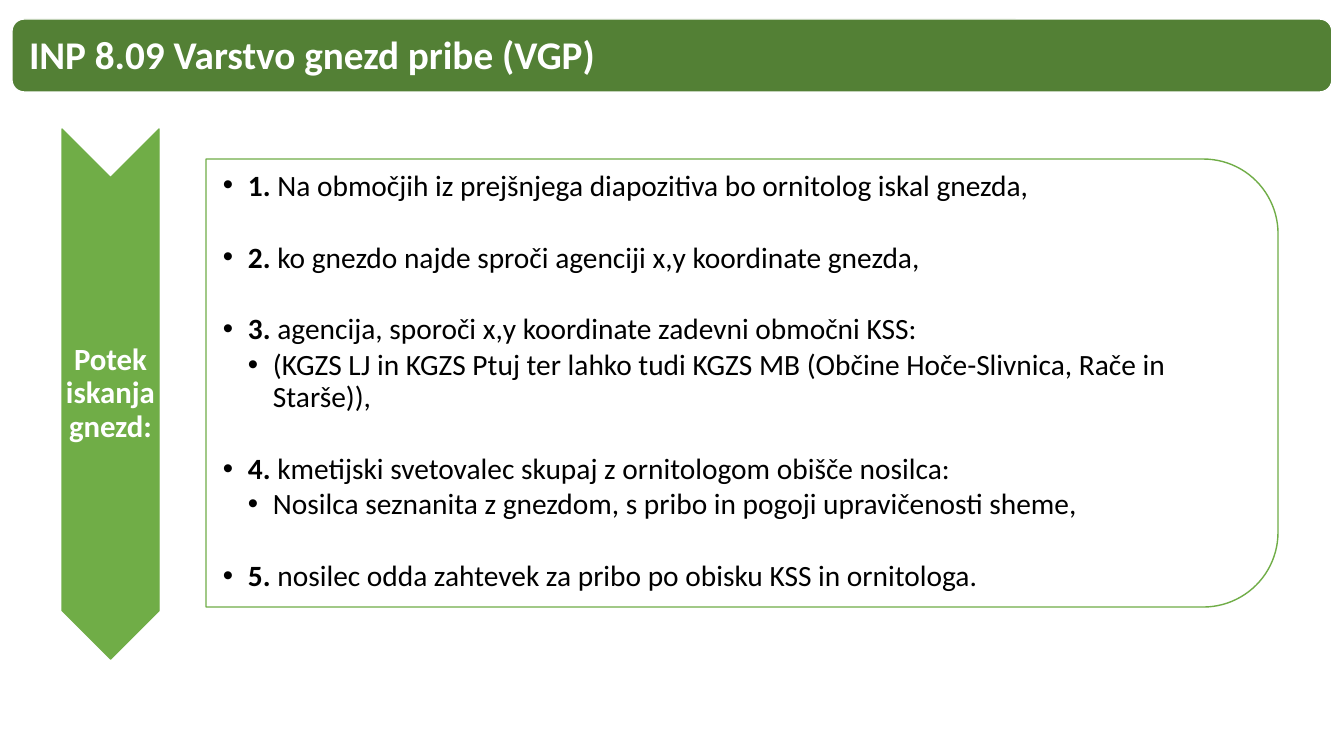
"""Build the slide on protecting lapwing nests: title bar, down arrow and list of steps."""
from lxml import etree
from pptx import Presentation
from pptx import util as u
from pptx.dml.color import RGBColor
from pptx.enum import shapes, text
from pptx.oxml.ns import qn

COLORS = {"bar": "538035", "green": "70AD47", "white": "FFFFFF", "black": "000000"}
FONT = "Calibri"
SLIDE = (1344, 756)
BAR, TITLE_AREA = (12, 19, 1320, 73), (16, 23, 1311, 68)
ARROW, LABEL_AREA = (62, 129, 97, 530), (62, 177, 97, 434)
PANEL, STEPS_AREA = (206, 159, 1072, 448), (207, 180, 1049, 404)
INDENT = 25
LINE_GAP, STEP_GAP = 2.8, 28.7

TITLE = "INP 8.09 Varstvo gnezd pribe (VGP)"
LABEL = "Potek iskanja gnezd:"
STEPS = [
    ("Na območjih iz prejšnjega diapozitiva bo ornitolog iskal gnezda,", []),
    ("ko gnezdo najde sproči agenciji x,y koordinate gnezda,", []),
    ("agencija, sporoči x,y koordinate zadevni območni KSS:",
     ["(KGZS LJ in KGZS Ptuj ter lahko tudi KGZS MB (Občine Hoče-Slivnica, Rače in Starše)),"]),
    ("kmetijski svetovalec skupaj z ornitologom obišče nosilca:",
     ["Nosilca seznanita z gnezdom, s pribo in pogoji upravičenosti sheme,"]),
    ("nosilec odda zahtevek za pribo po obisku KSS in ornitologa.", []),
]


def px(length):
    return u.Inches(length / 100.8)


def rgb(name):
    return RGBColor.from_string(COLORS[name])


def add_outline(page, kind, area, fill, line, turned=False):
    left, top, width, height = area
    if turned:
        left, top = left + (width - height) / 2, top + (height - width) / 2
        width, height = height, width
    shape = page.shapes.add_shape(kind, px(left), px(top), px(width), px(height))
    shape.rotation = 90 if turned else 0
    shape.shadow.inherit = False
    shape.fill.solid()
    shape.fill.fore_color.rgb = rgb(fill)
    shape.line.color.rgb = rgb(line)
    shape.line.width = u.Pt(1)
    return shape


def add_text(page, area, lines, size, color, align=text.PP_ALIGN.LEFT, inset=2, left_inset=None):
    """Write lines of (runs, level, gap before); level 0 has no bullet."""
    box = page.shapes.add_textbox(*map(px, area))
    frame = box.text_frame
    frame.word_wrap = True
    frame.vertical_anchor = text.MSO_ANCHOR.MIDDLE
    frame.margin_left = px(inset if left_inset is None else left_inset)
    frame.margin_top = frame.margin_right = frame.margin_bottom = px(inset)
    for index, (runs, level, gap) in enumerate(lines):
        para = frame.add_paragraph() if index else frame.paragraphs[0]
        para.alignment, para.line_spacing = align, 0.9
        para.space_before, para.space_after = u.Pt(gap), u.Pt(0)
        if level:
            para.level = level
            props = para._p.get_or_add_pPr()
            props.set("marL", str(px(INDENT * level)))
            props.set("indent", str(-px(INDENT)))
            etree.SubElement(props, qn("a:buFont")).set("typeface", "Arial")
            etree.SubElement(props, qn("a:buChar")).set("char", "•")
        for words, bold in runs:
            span = para.add_run()
            span.text = words
            span.font.name, span.font.size, span.font.bold = FONT, u.Pt(size), bold
            span.font.color.rgb = rgb(color)


def step_lines():
    lines = []
    for number, (step, details) in enumerate(STEPS, 1):
        lines.append(([(f"{number}. ", True), (step, False)], 1, STEP_GAP if lines else 0))
        lines += [([(detail, False)], 2, LINE_GAP) for detail in details]
    return lines


def main():
    deck = Presentation()
    deck.slide_width, deck.slide_height = map(px, SLIDE)
    page = deck.slides.add_slide(deck.slide_layouts[6])
    kinds = shapes.MSO_SHAPE

    add_outline(page, kinds.CHEVRON, ARROW, "green", "green", turned=True)
    add_text(page, LABEL_AREA, [([(LABEL, True)], 0, 0)], 22, "white", text.PP_ALIGN.CENTER)

    panel = add_outline(page, kinds.ROUND_2_SAME_RECTANGLE, PANEL, "white", "green", turned=True)
    tint = panel.fill._xPr.find(qn("a:solidFill"))[0]
    etree.SubElement(tint, qn("a:alpha")).set("val", "90000")
    add_text(page, STEPS_AREA, step_lines(), 21, "black", inset=1, left_inset=16)

    add_outline(page, kinds.ROUNDED_RECTANGLE, BAR, "bar", "white")
    add_text(page, TITLE_AREA, [([(TITLE, True)], 0, 0)], 28, "white", inset=13)
    deck.save("out.pptx")


if __name__ == "__main__":
    main()
